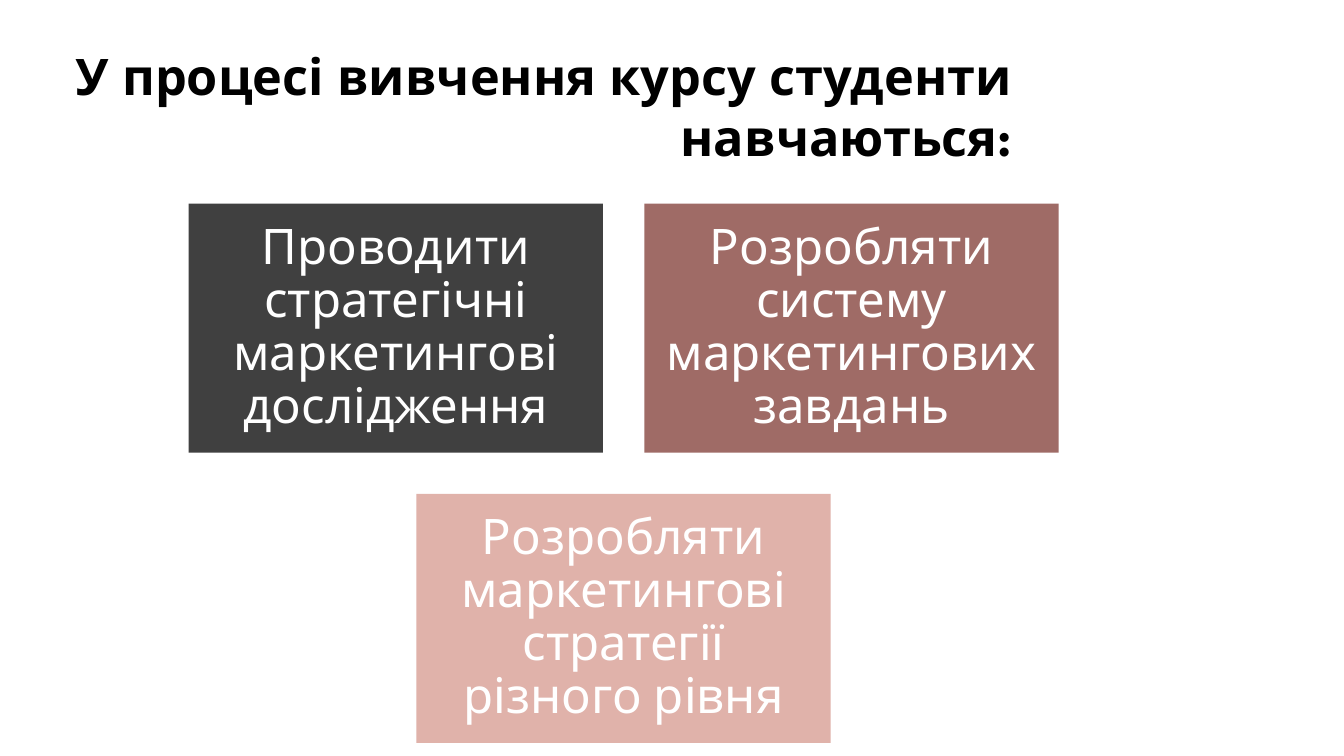
from pptx import Presentation
from pptx.dml.color import RGBColor
from pptx.enum import shapes, text
from pptx.util import Inches, Pt

TITLE = "У процесі вивчення курсу студенти навчаються:"
SKILLS = [
    ("Проводити стратегічні маркетингові дослідження", "404040"),
    ("Розробляти систему маркетингових завдань", "9F6B66"),
    ("Розробляти маркетингові стратегії різного рівня", "E0B2AA"),
]
FONT = "League Spartan"
COLUMNS = 2
GRID_LEFT, GRID_TOP = 1.87, 2.02
CARD_WIDTH, CARD_HEIGHT, GAP = 4.11, 2.47, 0.41
INSET = 0.15


def color(value):
    return RGBColor.from_string(value)


def write(frame, words, size, ink, align, bold=False):
    frame.word_wrap = True
    frame.vertical_anchor = text.MSO_ANCHOR.MIDDLE
    para = frame.paragraphs[0]
    para.alignment = align
    span = para.add_run()
    span.text = words
    span.font.name = FONT
    span.font.size = Pt(size)
    span.font.bold = bold
    span.font.color.rgb = color(ink)
    return para


def add_card(page, left, top, words, fill):
    box = page.shapes.add_shape(
        shapes.MSO_SHAPE.RECTANGLE, Inches(left), Inches(top),
        Inches(CARD_WIDTH), Inches(CARD_HEIGHT))
    box.shadow.inherit = False
    box.fill.solid()
    box.fill.fore_color.rgb = color(fill)
    box.line.fill.background()
    frame = box.text_frame
    frame.margin_left = frame.margin_right = Inches(INSET)
    frame.margin_top = frame.margin_bottom = Inches(INSET)
    para = write(frame, words, 35, "FFFFFF", text.PP_ALIGN.CENTER)
    para.line_spacing = 0.9


def main():
    deck = Presentation()
    deck.slide_width, deck.slide_height = Inches(13.33), Inches(7.5)
    page = deck.slides.add_slide(deck.slide_layouts[5])

    # Title
    title = page.shapes.title
    title.left, title.top = Inches(-0.67), Inches(0.77)
    title.width, title.height = Inches(10.81), Inches(0.56)
    write(title.text_frame, TITLE, 36, "000000", text.PP_ALIGN.RIGHT, bold=True)

    # Cards in rows, with a short last row centred
    step = CARD_WIDTH + GAP
    for index, (words, fill) in enumerate(SKILLS):
        row, column = divmod(index, COLUMNS)
        in_row = min(COLUMNS, len(SKILLS) - row * COLUMNS)
        left = GRID_LEFT + (column + (COLUMNS - in_row) / 2) * step
        top = GRID_TOP + row * (CARD_HEIGHT + GAP)
        add_card(page, left, top, words, fill)

    deck.save("out.pptx")


if __name__ == "__main__":
    main()
